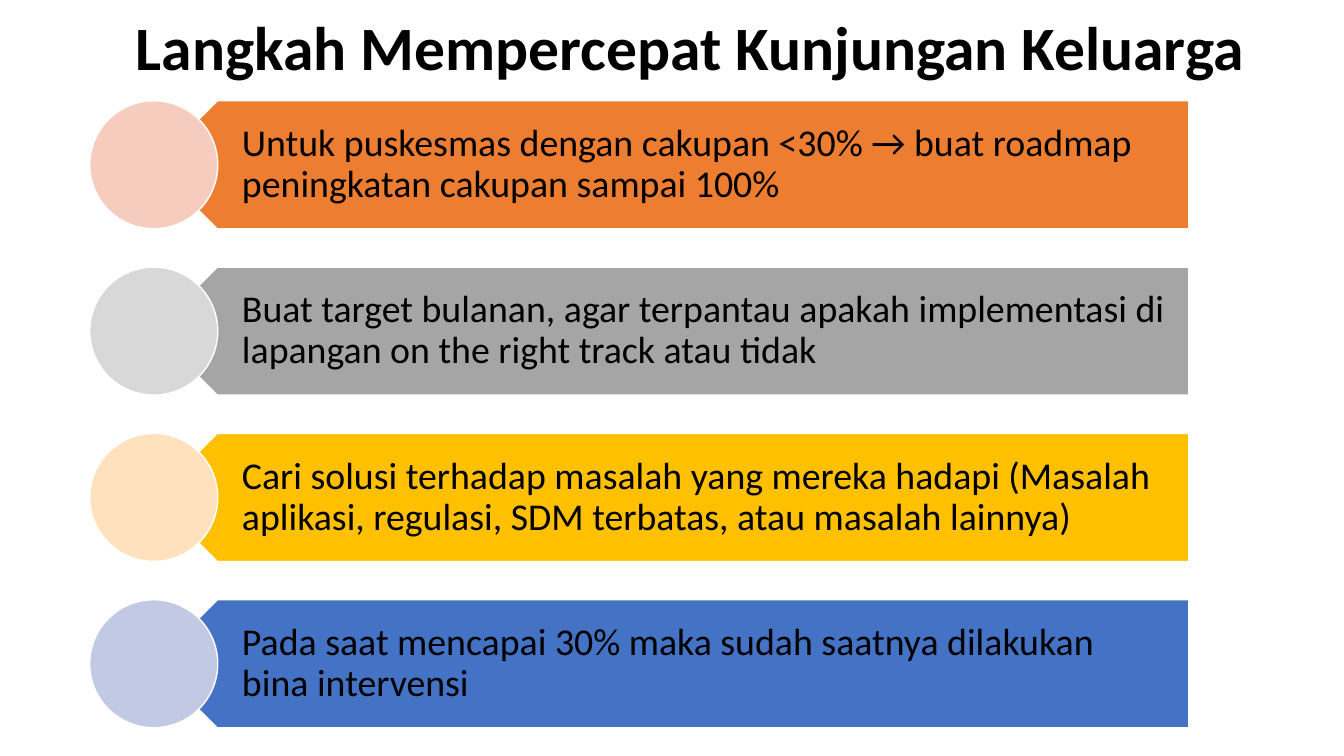
from dataclasses import dataclass

from pptx import Presentation
from pptx import util as u
from pptx.dml.color import RGBColor
from pptx.enum import shapes, text


@dataclass(frozen=True)
class Theme:
    font: str = "Calibri"
    ink: str = "000000"
    outline: str = "FFFFFF"
    title_size: int = 44
    step_size: int = 27


theme = Theme()

steps = [
    ("Untuk puskesmas dengan cakupan <30% → buat roadmap peningkatan cakupan sampai 100%",
     "ED7D31", "F6CCBE"),
    ("Buat target bulanan, agar terpantau apakah implementasi di lapangan on the right track atau tidak",
     "A5A5A5", "D8D8D8"),
    ("Cari solusi terhadap masalah yang mereka hadapi (Masalah aplikasi, regulasi, SDM terbatas, atau masalah lainnya)",
     "FFC000", "FFE2BD"),
    ("Pada saat mencapai 30% maka sudah saatnya dilakukan bina intervensi",
     "4472C4", "C1C9E4"),
]
first_top, pitch, height = 1, 1.65, 1.27
circle_left, bar_left, label_left, right = 0.89, 1.52, 1.84, 11.79


def write(box, wording, size, align, bold=False):
    frame = box.text_frame
    frame.text = wording
    frame.word_wrap = True
    frame.auto_size = text.MSO_AUTO_SIZE.NONE
    frame.vertical_anchor = text.MSO_ANCHOR.MIDDLE
    para = frame.paragraphs[0]
    para.alignment = align
    para.line_spacing = 0.9
    span = para.runs[0]
    span.font.name = theme.font
    span.font.size = u.Pt(size)
    span.font.bold = bold
    span.font.color.rgb = RGBColor.from_string(theme.ink)


def draw(page, preset, left, top, width, fill):
    shape = page.shapes.add_shape(
        preset, u.Inches(left), u.Inches(top), u.Inches(width), u.Inches(height))
    shape.shadow.inherit = False
    shape.fill.solid()
    shape.fill.fore_color.rgb = RGBColor.from_string(fill)
    shape.line.color.rgb = RGBColor.from_string(theme.outline)
    shape.line.width = u.Pt(1)
    return shape


deck = Presentation()
deck.slide_width = u.Inches(13.33)
deck.slide_height = u.Inches(7.5)
page = deck.slides.add_slide(deck.slide_layouts[5])

title = page.shapes.title
title.left, title.top = u.Inches(1.1), u.Inches(0.12)
title.width, title.height = u.Inches(11.5), u.Inches(0.77)
write(title, "Langkah Mempercepat Kunjungan Keluarga", theme.title_size,
      text.PP_ALIGN.CENTER, bold=True)

for index, (wording, bar_fill, circle_fill) in enumerate(steps):
    top = first_top + index * pitch

    bar = draw(page, shapes.MSO_SHAPE.PENTAGON, bar_left, top, right - bar_left, bar_fill)
    bar.rotation = 180

    label = page.shapes.add_textbox(
        u.Inches(label_left), u.Inches(top), u.Inches(right - label_left), u.Inches(height))
    write(label, wording, theme.step_size, text.PP_ALIGN.LEFT)
    label.text_frame.margin_left = u.Inches(0.56)
    label.text_frame.margin_right = u.Inches(0.21)
    label.text_frame.margin_top = label.text_frame.margin_bottom = u.Inches(0.11)

    draw(page, shapes.MSO_SHAPE.OVAL, circle_left, top, height, circle_fill)

deck.save("out.pptx")
